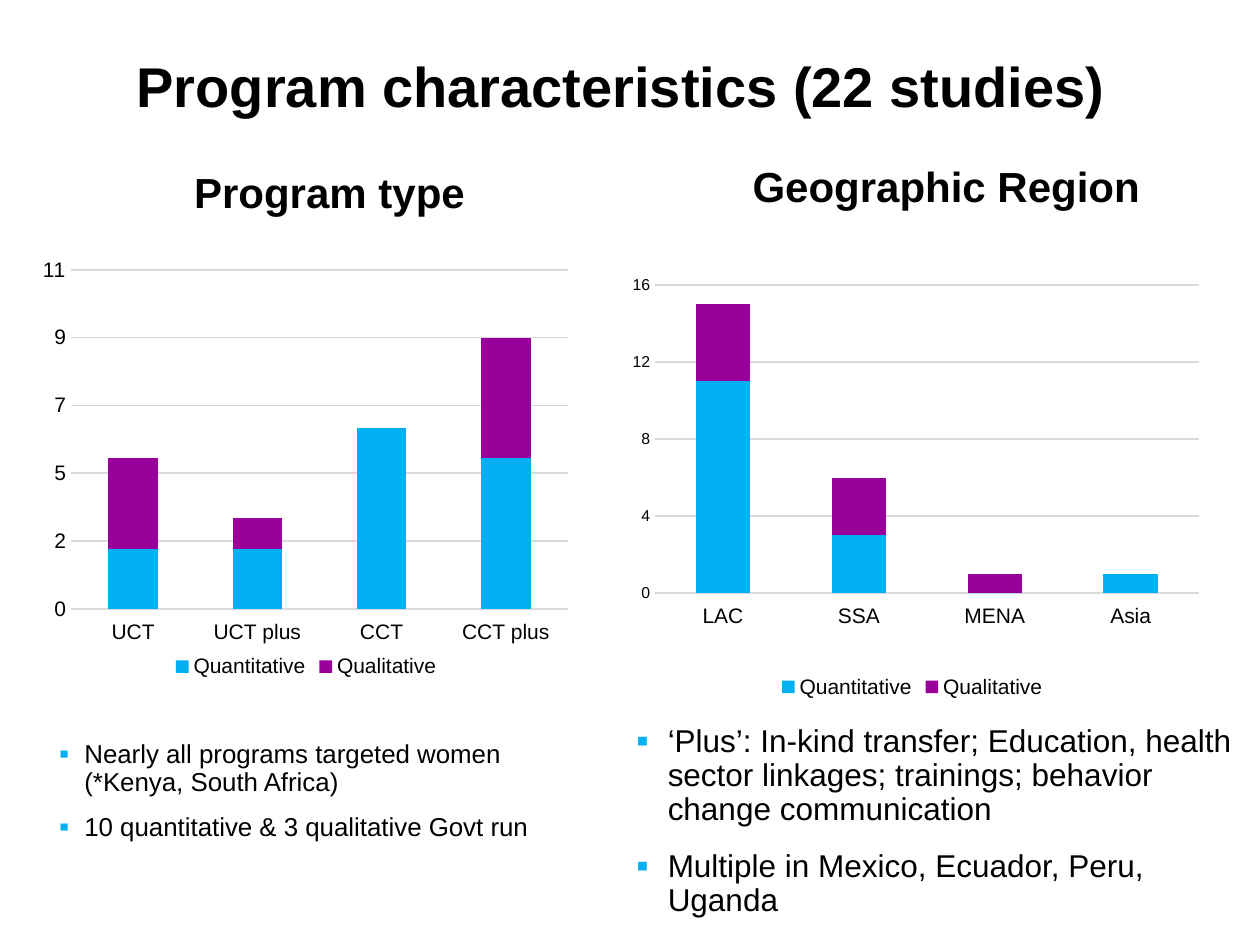
from lxml import etree
from pptx import Presentation
from pptx.chart.data import CategoryChartData
from pptx.dml.color import RGBColor
from pptx.enum.chart import (XL_CHART_TYPE, XL_LEGEND_POSITION, XL_TICK_LABEL_POSITION,
                             XL_TICK_MARK)
from pptx.enum.text import MSO_ANCHOR, MSO_AUTO_SIZE, PP_ALIGN
from pptx.oxml.ns import qn
from pptx.util import Inches, Pt

STACKED = XL_CHART_TYPE.COLUMN_STACKED
LEGEND_BOTTOM = XL_LEGEND_POSITION.BOTTOM
LABELS_LOW = XL_TICK_LABEL_POSITION.LOW
NO_TICKS = XL_TICK_MARK.NONE
MIDDLE, TOP = MSO_ANCHOR.MIDDLE, MSO_ANCHOR.TOP
CENTER, LEFT = PP_ALIGN.CENTER, PP_ALIGN.LEFT

BLACK = RGBColor(0x00, 0x00, 0x00)
GRID_GRAY = RGBColor(0xD9, 0xD9, 0xD9)
BLUE = RGBColor(0x00, 0xB0, 0xF0)
PURPLE = RGBColor(0x99, 0x00, 0x99)
FONT = "Arial"

SLIDE_WIDTH, SLIDE_HEIGHT = Inches(10), Inches(7.5)
COLUMNS, ROWS = 100, 75


def grid_box(column, row, columns, rows):
    """Turn grid cells into left, top, width and height."""
    cell_width, cell_height = SLIDE_WIDTH / COLUMNS, SLIDE_HEIGHT / ROWS
    return (round(column * cell_width), round(row * cell_height),
            round(columns * cell_width), round(rows * cell_height))


def format_font(font, size, bold=False):
    font.name = FONT
    font.size = Pt(size)
    font.bold = bold
    font.color.rgb = BLACK


def format_frame(text_frame, anchor):
    text_frame.word_wrap = True
    text_frame.auto_size = MSO_AUTO_SIZE.NONE
    text_frame.vertical_anchor = anchor
    text_frame.margin_left = text_frame.margin_right = Inches(0.05)
    text_frame.margin_top = text_frame.margin_bottom = Inches(0.05)


def format_paragraph(paragraph, size, alignment, bold=False):
    paragraph.alignment = alignment
    paragraph.line_spacing = 0.9
    for run in paragraph.runs:
        format_font(run.font, size, bold)


def set_heading(shape, text, size):
    text_frame = shape.text_frame
    text_frame.text = text
    format_frame(text_frame, MIDDLE)
    format_paragraph(text_frame.paragraphs[0], size, CENTER, bold=True)


def add_heading(slide, box, text):
    set_heading(slide.shapes.add_textbox(*grid_box(*box)), text, 24)


def add_bullet_mark(paragraph, indent):
    properties = paragraph._p.get_or_add_pPr()
    properties.set("marL", str(Inches(indent)))
    properties.set("indent", str(-Inches(indent)))
    color = etree.SubElement(properties, qn("a:buClr"))
    etree.SubElement(color, qn("a:srgbClr"), val=str(BLUE))
    etree.SubElement(properties, qn("a:buSzPct"), val="111000")
    etree.SubElement(properties, qn("a:buFont"), typeface=FONT)
    etree.SubElement(properties, qn("a:buChar"), char="▪")


def add_bullets(slide, box, lines, size, indent, space_before):
    text_frame = slide.shapes.add_textbox(*grid_box(*box)).text_frame
    text_frame.text = "\n".join(lines)
    format_frame(text_frame, TOP)
    for paragraph in text_frame.paragraphs:
        format_paragraph(paragraph, size, LEFT)
        paragraph.space_before = Pt(space_before)
        add_bullet_mark(paragraph, indent)


def set_plot_area(chart, x, y, width, height):
    """Place the inner plot area by shares of the chart's size."""
    plot_area = chart.element.find(".//" + qn("c:plotArea"))
    for layout in plot_area.findall(qn("c:layout")):
        plot_area.remove(layout)
    layout = etree.Element(qn("c:layout"))
    plot_area.insert(0, layout)
    manual = etree.SubElement(layout, qn("c:manualLayout"))
    settings = (("layoutTarget", "inner"), ("xMode", "edge"), ("yMode", "edge"),
                ("x", x), ("y", y), ("w", width), ("h", height))
    for name, value in settings:
        etree.SubElement(manual, qn("c:" + name), val=str(value))


def format_axes(chart, step, value_size):
    category_axis, value_axis = chart.category_axis, chart.value_axis
    for axis, size in ((category_axis, 12), (value_axis, value_size)):
        axis.major_tick_mark = axis.minor_tick_mark = NO_TICKS
        format_font(axis.tick_labels.font, size)
    category_axis.tick_label_position = LABELS_LOW
    value_axis.tick_labels.number_format = "0"
    value_axis.tick_labels.number_format_is_linked = False
    value_axis.minimum_scale = 0
    value_axis.major_unit = step
    value_axis.format.line.fill.background()
    for line in (category_axis.format.line, value_axis.major_gridlines.format.line):
        line.color.rgb = GRID_GRAY
        line.width = Pt(1)


def add_study_chart(slide, box, categories, quantitative, qualitative,
                    step, maximum, value_size, plot_height):
    data = CategoryChartData()
    data.categories = categories
    data.add_series("Quantitative", quantitative)
    data.add_series("Qualitative", qualitative)
    chart = slide.shapes.add_chart(STACKED, *grid_box(*box), data).chart
    chart.has_title = False
    format_font(chart.font, 10)
    format_axes(chart, step, value_size)
    chart.value_axis.maximum_scale = maximum
    plot = chart.plots[0]
    plot.gap_width, plot.overlap = 150, 100
    plot.vary_by_categories = False
    for series, color in zip(plot.series, (BLUE, PURPLE)):
        series.format.fill.solid()
        series.format.fill.fore_color.rgb = color
        series.invert_if_negative = False
    chart.has_legend = True
    chart.legend.position = LEGEND_BOTTOM
    chart.legend.include_in_layout = True
    format_font(chart.legend.font, 12)
    set_plot_area(chart, 0.06, 0.05, 0.93, plot_height)


def main():
    presentation = Presentation()
    presentation.slide_width, presentation.slide_height = SLIDE_WIDTH, SLIDE_HEIGHT
    slide = presentation.slides.add_slide(presentation.slide_layouts.get_by_name("Title Only"))

    title = slide.shapes.title
    title.left, title.top, title.width, title.height = grid_box(6.2, 1.7, 86.2, 10.8)
    set_heading(title, "Program characteristics (22 studies)", 32)

    add_bullets(slide, (4.2, 58.3, 41.3, 8.8),
                ["Nearly all programs targeted women (*Kenya, South Africa)",
                 "10 quantitative & 3 qualitative Govt run"],
                size=14.8, indent=0.2, space_before=10)
    add_heading(slide, (12.4, 13, 27.5, 5), "Program type")
    add_bullets(slide, (50, 57.1, 50.3, 33.7),
                ["‘Plus’: In-kind transfer; Education, health sector linkages; "
                 "trainings; behavior change communication",
                 "Multiple in Mexico, Ecuador, Peru, Uganda"],
                size=18, indent=0.25, space_before=13)
    add_study_chart(slide, (3.1, 19.7, 42.4, 34.5),
                    ["UCT", "UCT plus", "CCT", "CCT plus"], [2, 2, 6, 5], [3, 1, None, 4],
                    step=2.25, maximum=11.25, value_size=12, plot_height=0.78)
    add_heading(slide, (56.2, 12.6, 37.8, 4.8), "Geographic Region")
    add_study_chart(slide, (49.2, 20.9, 46.4, 34.9),
                    ["LAC", "SSA", "MENA", "Asia"], [11, 3, 0, 1], [4, 3, 1, 0],
                    step=4, maximum=16, value_size=9, plot_height=0.7)
    presentation.save("out.pptx")


if __name__ == "__main__":
    main()
